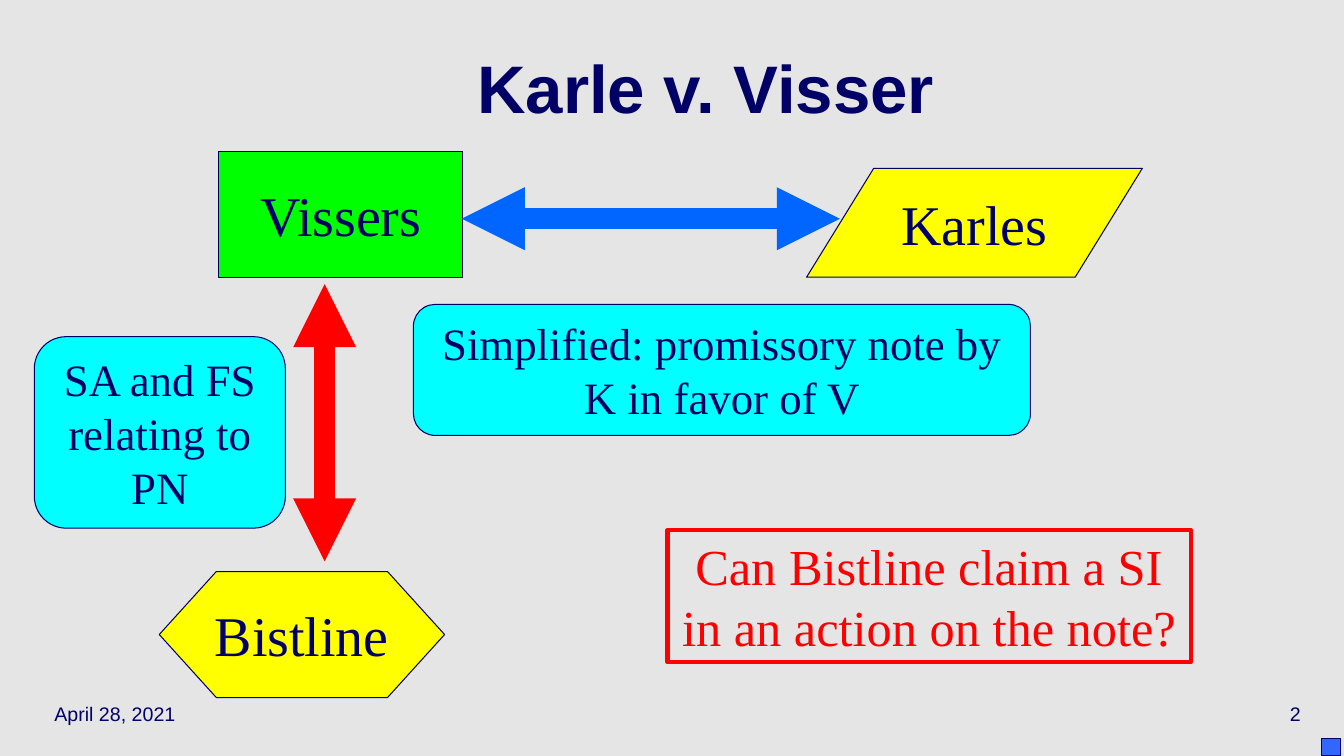
from dataclasses import dataclass, field

from lxml.etree import SubElement
from pptx import Presentation
from pptx.dml.color import RGBColor
from pptx.enum.shapes import MSO_CONNECTOR, MSO_SHAPE
from pptx.enum.text import MSO_ANCHOR, MSO_AUTO_SIZE, PP_ALIGN
from pptx.oxml.ns import qn
from pptx.shapes.autoshape import Shape
from pptx.slide import Slide
from pptx.text.text import TextFrame
from pptx.util import Inches, Pt


@dataclass(frozen=True)
class Theme:
    background: str = "E5E5E5"
    navy: str = "000066"
    yellow: str = "FFFF00"
    green: str = "00FF00"
    cyan: str = "00FFFF"
    blue: str = "0066FF"
    corner_blue: str = "3366FF"
    red: str = "FF0000"
    heading_font: str = "Arial"
    body_font: str = "Times New Roman"
    title_size: int = 48
    party_size: int = 40
    question_size: int = 36
    note_size: int = 32
    footer_size: int = 14
    outline: float = 0.75
    frame: float = 3
    arrow: float = 15


THEME = Theme()
Box = tuple[float, float, float, float]
Point = tuple[float, float]


@dataclass(frozen=True)
class TextStyle:
    size: int
    font: str = THEME.body_font
    color: str = THEME.navy
    bold: bool = False
    align: PP_ALIGN = PP_ALIGN.CENTER
    line_spacing: float = 1.0
    frame: dict = field(default_factory=dict)


@dataclass(frozen=True)
class Block:
    box: Box
    kind: MSO_SHAPE
    fill: str | None
    text: str = ""
    style: TextStyle | None = None
    line_color: str = THEME.navy
    line_width: float = THEME.outline


@dataclass(frozen=True)
class Arrow:
    start: Point
    end: Point
    color: str


@dataclass(frozen=True)
class Footer:
    box: Box
    text: str
    align: PP_ALIGN


TITLE = TextStyle(THEME.title_size, THEME.heading_font, bold=True, line_spacing=0.7)
PARTY = TextStyle(THEME.party_size, frame={"word_wrap": False})
NOTE = TextStyle(THEME.note_size)
QUESTION = TextStyle(THEME.question_size, color=THEME.red,
                     frame={"vertical_anchor": MSO_ANCHOR.TOP})

BLOCKS = [
    Block((8, 1.67, 3.33, 1.08), MSO_SHAPE.FLOWCHART_DATA, THEME.yellow, "Karles", PARTY),
    Block((2.17, 1.5, 2.42, 1.25), MSO_SHAPE.FLOWCHART_PROCESS, THEME.green, "Vissers", PARTY),
    Block((1.58, 5.67, 2.83, 1.25), MSO_SHAPE.FLOWCHART_PREPARATION, THEME.yellow,
          "Bistline", PARTY),
    Block((4.1, 3.02, 6.12, 1.3), MSO_SHAPE.FLOWCHART_ALTERNATE_PROCESS, THEME.cyan,
          "Simplified: promissory note by K in favor of V", NOTE),
    Block((0.34, 3.34, 2.49, 1.9), MSO_SHAPE.FLOWCHART_ALTERNATE_PROCESS, THEME.cyan,
          "SA and FS relating to PN", NOTE),
    Block((13.11, 7.33, 0.19, 0.17), MSO_SHAPE.RECTANGLE, THEME.corner_blue),
    Block((6.62, 5.26, 5.19, 1.31), MSO_SHAPE.RECTANGLE, None,
          "Can Bistline claim a SI in an action on the note?", QUESTION,
          THEME.red, THEME.frame),
]
ARROWS = [
    Arrow((4.58, 2.17), (8.33, 2.17), THEME.blue),
    Arrow((3.22, 2.82), (3.22, 5.57), THEME.red),
]
FOOTERS = [
    Footer((0.44, 6.83, 2.78, 0.5), "April 28, 2021", PP_ALIGN.LEFT),
    Footer((10.22, 6.83, 2.78, 0.5), "2", PP_ALIGN.RIGHT),
]


def set_attributes(target: object, values: dict) -> None:
    for name, value in values.items():
        setattr(target, name, value)


def write_text(text_frame: TextFrame, text: str, style: TextStyle) -> None:
    set_attributes(text_frame, {
        "auto_size": MSO_AUTO_SIZE.NONE,
        "word_wrap": True,
        "vertical_anchor": MSO_ANCHOR.MIDDLE,
        **style.frame,
    })
    paragraph = text_frame.paragraphs[0]
    set_attributes(paragraph, {"alignment": style.align, "line_spacing": style.line_spacing})
    run = paragraph.add_run()
    run.text = text
    set_attributes(run.font, {"name": style.font, "size": Pt(style.size), "bold": style.bold})
    run.font.color.rgb = RGBColor.from_string(style.color)


def add_title(slide: Slide, text: str, box: Box) -> None:
    title = slide.shapes.title
    set_attributes(title, dict(zip(("left", "top", "width", "height"), map(Inches, box))))
    write_text(title.text_frame, text, TITLE)


def add_footer(slide: Slide, footer: Footer) -> None:
    text_box = slide.shapes.add_textbox(*map(Inches, footer.box))
    style = TextStyle(THEME.footer_size, THEME.heading_font, align=footer.align)
    write_text(text_box.text_frame, footer.text, style)


def add_block(slide: Slide, block: Block) -> Shape:
    shape = slide.shapes.add_shape(block.kind, *map(Inches, block.box))
    shape.shadow.inherit = False
    if block.fill is None:
        shape.fill.background()
    else:
        shape.fill.solid()
        shape.fill.fore_color.rgb = RGBColor.from_string(block.fill)
    shape.line.color.rgb = RGBColor.from_string(block.line_color)
    shape.line.width = Pt(block.line_width)
    if block.style:
        write_text(shape.text_frame, block.text, block.style)
    return shape


def add_arrow(slide: Slide, arrow: Arrow) -> None:
    """Draw a thick line with a triangle at both ends."""
    connector = slide.shapes.add_connector(
        MSO_CONNECTOR.STRAIGHT, *map(Inches, arrow.start + arrow.end))
    connector.line.color.rgb = RGBColor.from_string(arrow.color)
    connector.line.width = Pt(THEME.arrow)
    properties = connector._element.spPr
    line = properties.find(qn("a:ln"))
    for end in ("a:headEnd", "a:tailEnd"):
        SubElement(line, qn(end), type="triangle")
    SubElement(properties, qn("a:effectLst"))


def main() -> None:
    presentation = Presentation()
    set_attributes(presentation, {"slide_width": Inches(13.33), "slide_height": Inches(7.5)})
    slide = presentation.slides.add_slide(presentation.slide_layouts.get_by_name("Title Only"))
    slide.background.fill.solid()
    slide.background.fill.fore_color.rgb = RGBColor.from_string(THEME.background)

    add_title(slide, "Karle v. Visser", (0.89, 0.33, 12.22, 1.25))
    for footer in FOOTERS:
        add_footer(slide, footer)
    for block in BLOCKS:
        add_block(slide, block)
    for arrow in ARROWS:
        add_arrow(slide, arrow)
    presentation.save("out.pptx")


if __name__ == "__main__":
    main()
